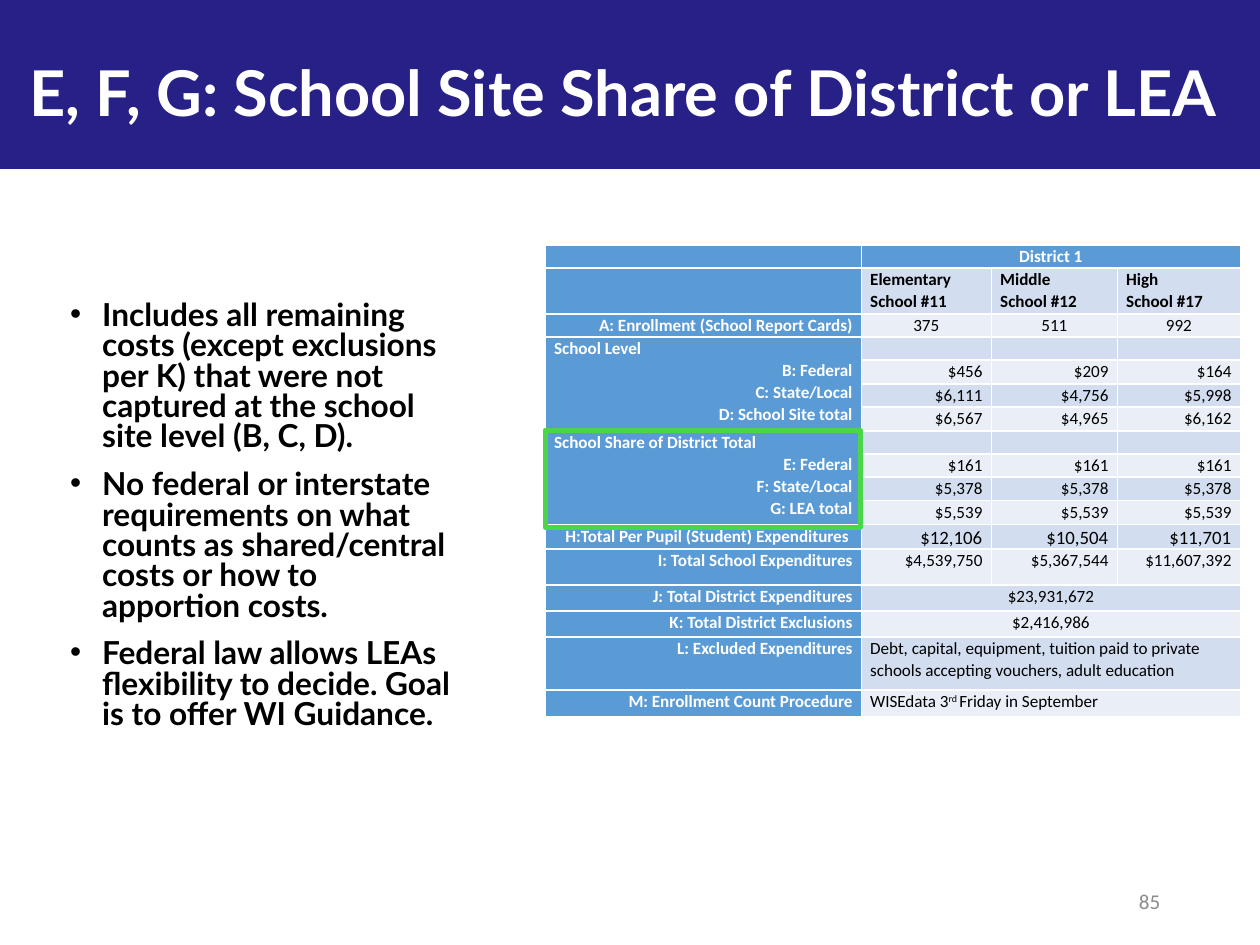
from lxml.etree import SubElement
from pptx import Presentation
from pptx.dml.color import RGBColor
from pptx.enum.shapes import MSO_SHAPE as Shape
from pptx.enum.text import MSO_ANCHOR as Anchor, MSO_AUTO_SIZE as AutoSize, PP_ALIGN as Align
from pptx.oxml.ns import qn
from pptx.util import Inches, Pt

TITLE = "E, F, G: School Site Share of District or LEA "
PAGE = "85"
POINTS = [
    "Includes all remaining costs (except exclusions per K) that were not captured "
    "at the school site level (B, C, D).",
    "No federal or interstate requirements on what counts as shared/central costs "
    "or how to apportion costs.",
    "Federal law allows LEAs flexibility to decide. Goal is to offer WI Guidance.",
]
L, C, R = Align.LEFT, Align.CENTER, Align.RIGHT
BLANK = ["", "", ""]
# Row height, label, values, value alignment; a single value spans all schools,
# a label of None continues the group above, ^ encloses superscript.
ROWS = [
    (23, "", ["District 1"], C),
    (46, "", ["Elementary\nSchool #11", "Middle\nSchool #12", "High\nSchool #17"], L),
    (23, "A: Enrollment (School Report Cards)", ["375", "511", "992"], C),
    (23, "School Level\nB: Federal\nC: State/Local\nD: School Site total", BLANK, R),
    (24, None, ["$456", "$209", "$164"], R),
    (23, None, ["$6,111", "$4,756", "$5,998"], R),
    (24, None, ["$6,567", "$4,965", "$6,162"], R),
    (23, "School Share of District Total\nE: Federal\nF: State/Local\nG: LEA total", BLANK, R),
    (23, None, ["$161", "$161", "$161"], R),
    (24, None, ["$5,378", "$5,378", "$5,378"], R),
    (24, None, ["$5,539", "$5,539", "$5,539"], R),
    (24, "H:Total Per Pupil (Student) Expenditures ", ["$12,106", "$10,504", "$11,701"], R),
    (36, "I: Total School Expenditures", ["$4,539,750", "$5,367,544", "$11,607,392"], R),
    (26, "J: Total District Expenditures", ["$23,931,672"], C),
    (26, "K: Total District Exclusions", ["$2,416,986"], C),
    (53, "L: Excluded Expenditures",
     ["Debt, capital, equipment, tuition paid to private schools accepting vouchers, "
      "adult education"], L),
    (27, "M: Enrollment Count Procedure", ["WISEdata 3^rd ^Friday in September"], L),
]
COLUMNS = [316, 130, 126, 123]
GROUP_ROWS = 4
PER_PUPIL_ROW = 11
HEADER_BLUE, BANDS = "5B9BD5", ("EAEFF7", "D2DEEF")
WHITE, BLACK = "FFFFFF", "000000"


def px(n):
    return round(n * 914400 / 123)


def color(hex_string):
    return RGBColor.from_string(hex_string)


def fill(part, hex_string):
    part.fill.solid()
    part.fill.fore_color.rgb = color(hex_string)


def write(frame, text, size=10, font="Calibri", ink=BLACK, bold=False, align=L,
          spacing=None, before=0):
    """Fill a text frame, one paragraph a line; parts between ^ are superscript."""
    frame.word_wrap = True
    for i, line in enumerate(text.split("\n")):
        paragraph = frame.paragraphs[0] if i == 0 else frame.add_paragraph()
        paragraph.alignment = align
        if spacing:
            paragraph.line_spacing = spacing
        if before and i:
            paragraph.space_before = Pt(before)
        if not line:  # keeps an empty table cell at the text height
            SubElement(paragraph._p, qn("a:endParaRPr"), sz=str(size * 100))
            continue
        for j, part in enumerate(line.split("^")):
            run = paragraph.add_run()
            run.text = part
            run.font.size, run.font.name = Pt(size), font
            run.font.bold, run.font.color.rgb = bold, color(ink)
            if j % 2:
                run.font._element.set("baseline", "30000")


def write_cell(cell, text, background, **format):
    cell.margin_left = cell.margin_right = px(9)
    cell.margin_top = cell.margin_bottom = 0
    fill(cell, background)
    write(cell.text_frame, text, spacing=1.07, **format)


def add_bullets(frame):
    for paragraph in frame.paragraphs:
        properties = paragraph._p.get_or_add_pPr()
        properties.set("marL", str(px(32)))
        properties.set("indent", str(-px(32)))
        SubElement(properties, qn("a:buFont"), typeface="Arial")
        SubElement(properties, qn("a:buChar"), char="•")


def add_table(slide, left, top):
    heights = [row[0] for row in ROWS]
    table = slide.shapes.add_table(len(ROWS), len(COLUMNS), px(left), px(top),
                                   px(sum(COLUMNS)), px(sum(heights))).table
    for column, width in zip(table.columns, COLUMNS):
        column.width = px(width)
    for r, (height, label, values, align) in enumerate(ROWS):
        table.rows[r].height = px(height)
        label_cell = table.cell(r, 0)
        write_cell(label_cell, label or "", HEADER_BLUE, ink=WHITE, bold=True, align=R)
        if label and "\n" in label:
            label_cell.text_frame.paragraphs[0].alignment = L
            label_cell.merge(table.cell(r + GROUP_ROWS - 1, 0))
        top_row = r == 0
        for c, value in enumerate(values + [""] * (3 - len(values)), 1):
            write_cell(table.cell(r, c), value, HEADER_BLUE if top_row else BANDS[r % 2],
                       ink=WHITE if top_row else BLACK, bold=r < 2, align=align,
                       size=11 if r == PER_PUPIL_ROW else 10)
        if len(values) == 1:
            table.cell(r, 1).merge(table.cell(r, 3))


def main():
    deck = Presentation()
    deck.slide_width, deck.slide_height = Inches(10.24), Inches(7.68)
    slide = deck.slides.add_slide(deck.slide_layouts[5])
    shapes = slide.shapes

    band = shapes.add_shape(Shape.RECTANGLE, 0, 0, deck.slide_width, px(169))
    band.shadow.inherit = False
    fill(band, "262087")
    band.line.fill.background()
    shapes._spTree.insert(2, band._element)

    title = shapes.title
    title.left, title.top, title.width, title.height = 0, 0, deck.slide_width, px(182)
    title.text_frame.auto_size = AutoSize.NONE
    title.text_frame.vertical_anchor = Anchor.MIDDLE
    write(title.text_frame, TITLE, size=36.9, font="Lato", ink=WHITE, bold=True, align=C)

    page = shapes.add_textbox(px(889), px(876), px(283), px(50)).text_frame
    page.vertical_anchor = Anchor.MIDDLE
    write(page, PAGE, size=12.3, ink="8C8C8C", align=R)

    points = shapes.add_textbox(px(58), px(296), px(414), px(480)).text_frame
    write(points, "\n".join(POINTS), size=18.5, font="Lato", bold=True, spacing=0.8, before=10.2)
    add_bullets(points)

    add_table(slide, 545, 245)

    highlight = shapes.add_shape(Shape.RECTANGLE, px(545), px(430), px(315), px(97))
    highlight.shadow.inherit = False
    highlight.fill.background()
    highlight.line.color.rgb, highlight.line.width = color("49D749"), Pt(3)

    deck.save("out.pptx")


if __name__ == "__main__":
    main()
